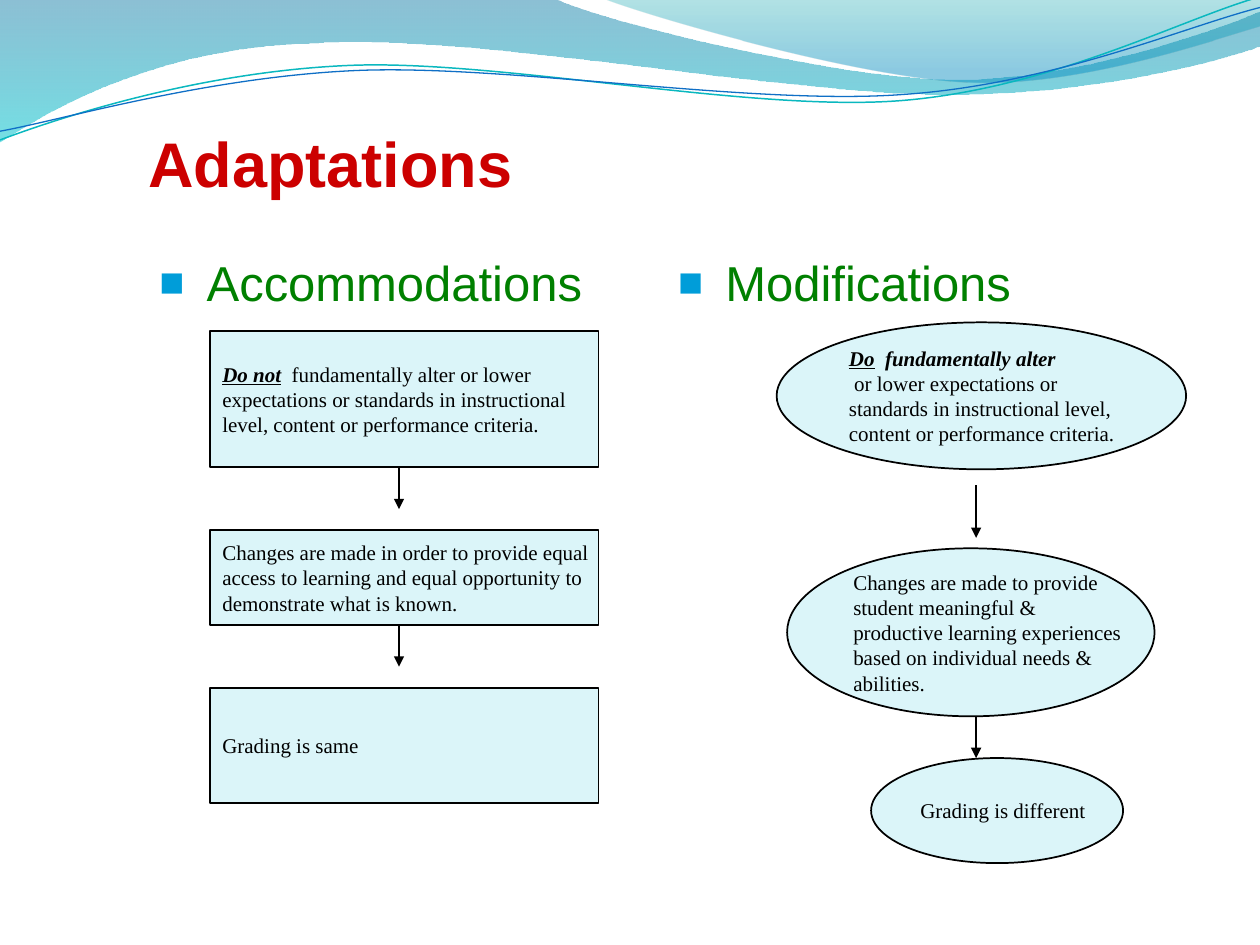
import math
from dataclasses import dataclass

import pptx
import pptx.util
import pptx.dml.color
import pptx.enum.shapes
import pptx.enum.text
import pptx.oxml
import pptx.oxml.ns
from lxml import etree

Pt = pptx.util.Pt
qn = pptx.oxml.ns.qn
KIND = pptx.enum.shapes.MSO_SHAPE
LEFT = pptx.enum.text.PP_ALIGN.LEFT
MID = pptx.enum.text.MSO_ANCHOR.MIDDLE


@dataclass
class Theme:
    red: str = "CC0000"
    green: str = "008000"
    blue: str = "009DD9"
    pale: str = "DBF5F9"
    black: str = "000000"
    teal: str = "0AB8BF"
    navy: str = "0F6FC6"
    deep: tuple = ((0, "0074A1", 45), (1, "00C6CF", 55))
    light: tuple = ((0, "00A1A9", 30), (0.8, "008BBF", 45))
    head: tuple = ("Arial", 36)
    topic: tuple = ("Arial", 28)
    body: tuple = ("Times New Roman", 12)


T = Theme()
STRONG = {"bold": True, "italic": True}
KEY = {**STRONG, "underline": True}

# Wave outlines: a pair is a straight step, six numbers are a curve
DEEP = [(0, 0), (317, -0.7), (343, 12, 478, 45, 546, 45.4), (614, 45.4, 690, 19, 720, 6.5),
        (720.7, 26), (708, 32, 626, 55, 537, 54), (448, 54, 275, 20, 185, 24.5),
        (93, 26, 33, 60, -0.7, 81.4), (0, 0)]
LIGHT = [(345, -0.7), (366, 8, 491, 45, 554, 47), (616, 49.7, 692, 23, 720, 15), (720, 0),
         (345, -0.7)]
TEAL = [(0, 80), (34.6, 67, 113.8, 41, 199.4, 37.4), (284.4, 33.8, 427, 64, 513.4, 57.6),
        (599.8, 51.1, 675.4, 10.8, 718.6, -1.4)]
NAVY = [(0, 75), (33.8, 69, 118, 44, 203.8, 40.3), (290, 36.7, 430, 60.5, 516.2, 54),
        (602, 48.2, 677.5, 15, 720, 4.3)]


def rgb(code):
    return pptx.dml.color.RGBColor.from_string(code)


def spin(steps, mid, angle):
    """Turn all points of the steps clockwise about mid."""
    c, s = math.cos(math.radians(angle)), math.sin(math.radians(angle))
    turned = []
    for step in steps:
        row = []
        for x, y in zip(step[::2], step[1::2]):
            x, y = x - mid[0], y - mid[1]
            row += [mid[0] + x * c - y * s, mid[1] + x * s + y * c]
        turned.append(tuple(row))
    return turned


def outline(slide, steps, close):
    pts = [(Pt(x), Pt(y)) for step in steps for x, y in zip(step[::2], step[1::2])]
    pen = slide.shapes.build_freeform(*pts[0], scale=1.0)
    pen.add_line_segments(pts[1:], close=close)
    shape = pen.convert_to_shape()
    shape.shadow.inherit = False
    # Join each three points of a curve into one bend
    legs = iter(list(shape._element.spPr.iter(qn("a:lnTo"))))
    for step in steps[1:]:
        leg = next(legs)
        if len(step) == 6:
            leg.tag = qn("a:cubicBezTo")
            for extra in (next(legs), next(legs)):
                leg.append(extra[0])
                extra.getparent().remove(extra)
    return shape


def wave(slide, steps, stops):
    shape = outline(slide, steps, True)
    shape.line.fill.background()
    shape.fill.gradient()
    shape.fill.gradient_angle = 270
    for stop, (place, code, _) in zip(shape.fill.gradient_stops, stops):
        stop.position = place
        stop.color.rgb = rgb(code)
    tints = shape._element.spPr.iter(qn("a:srgbClr"))
    for tint, (_, _, alpha) in zip(tints, stops):
        etree.SubElement(tint, qn("a:alpha"), val=str(alpha * 1000))


def strand(slide, steps, color, width, mid):
    tilt = 2.7
    shape = outline(slide, spin(steps, mid, tilt), False)
    shape.rotation = 360 - tilt
    shape.fill.background()
    shape.line.color.rgb = rgb(color)
    shape.line.width = Pt(width)


def write(para, text, face, color, style=None):
    run = para.add_run()
    run.text = text
    look = {"name": face[0], "size": Pt(face[1]), "bold": False, **(style or {})}
    for key, val in look.items():
        setattr(run.font, key, val)
    run.font.color.rgb = rgb(color)


def title(slide, box):
    shape = slide.shapes.title
    for key, val in zip(("left", "top", "width", "height"), box):
        setattr(shape, key, Pt(val))
    shape.text_frame.vertical_anchor = MID
    para = shape.text_frame.paragraphs[0]
    para.alignment = LEFT
    write(para, "Adaptations", T.head, T.red, {"bold": True})


def topic(slide, box, text):
    frame = slide.shapes.add_textbox(*map(Pt, box)).text_frame
    frame.word_wrap = True
    para = frame.paragraphs[0]
    write(para, text, T.topic, T.green)
    props = para._p.get_or_add_pPr()
    props.set("marL", str(Pt(27)))
    props.set("indent", str(Pt(-27)))
    space = etree.SubElement(props, qn("a:spcBef"))
    etree.SubElement(space, qn("a:spcPct"), val="20000")
    tint = etree.SubElement(props, qn("a:buClr"))
    etree.SubElement(tint, qn("a:srgbClr"), val=T.blue)
    etree.SubElement(props, qn("a:buSzPct"), val="85000")
    etree.SubElement(props, qn("a:buFont"), typeface="Arial")
    etree.SubElement(props, qn("a:buChar"), char="■")


def node(slide, kind, box, lines):
    shape = slide.shapes.add_shape(kind, *map(Pt, box))
    shape.shadow.inherit = False
    shape.fill.solid()
    shape.fill.fore_color.rgb = rgb(T.pale)
    shape.line.color.rgb = rgb(T.black)
    shape.line.width = Pt(1)
    frame = shape.text_frame
    frame.word_wrap = False
    frame.vertical_anchor = MID
    for i, line in enumerate(lines):
        para = frame.add_paragraph() if i else frame.paragraphs[0]
        para.alignment = LEFT
        for text, style in [(line, None)] if isinstance(line, str) else line:
            write(para, text, T.body, T.black, style)


def arrow(slide, x, top, end):
    link = slide.shapes.add_connector(
        pptx.enum.shapes.MSO_CONNECTOR.STRAIGHT, Pt(x), Pt(top), Pt(x), Pt(end))
    link.line.color.rgb = rgb(T.black)
    link.line.width = Pt(1)
    etree.SubElement(link.line._get_or_add_ln(), qn("a:tailEnd"), type="triangle")
    etree.SubElement(link._element.spPr, qn("a:effectLst"))


def column(slide, box, name, kind, nodes, x, arrows):
    """A heading with its flow of nodes; offsets count from the box corner."""
    left, top = box[:2]
    topic(slide, box, name)
    for (dx, dy, wide, high), lines in nodes:
        node(slide, kind, (left + dx, top + dy, wide, high), lines)
    for start, end in arrows:
        arrow(slide, left + x, top + start, top + end)


SAME = [
    ((36, 48, 222, 78), [
        [("Do not", KEY), ("  fundamentally alter or lower", None)],
        "expectations or standards in instructional",
        "level, content or performance criteria."]),
    ((36, 162, 222, 54), [
        "Changes are made in order to provide equal",
        "access to learning and equal opportunity to",
        "demonstrate what is known."]),
    ((36, 252, 222, 66), ["Grading is same"])]
OTHER = [
    ((63.4, 43.2, 234, 84), [
        [("Do", KEY), ("  fundamentally alter", STRONG)],
        " or lower expectations or",
        "standards in instructional level,",
        "content or performance criteria."]),
    ((69.4, 172.3, 210, 96), [
        "Changes are made to provide", "student meaningful &",
        "productive learning experiences", "based on individual needs &",
        "abilities."]),
    ((117.4, 292.2, 144, 60), ["Grading is different"])]


def main():
    deck = pptx.Presentation()
    deck.slide_width, deck.slide_height = Pt(720), Pt(540)
    slide = deck.slides.add_slide(deck.slide_layouts[5])
    # Waves along the top edge
    wave(slide, DEEP, T.deep)
    wave(slide, LIGHT, T.light)
    strand(slide, TEAL, T.teal, 0.85, (359.3, 41.4))
    strand(slide, NAVY, T.navy, 0.75, (359.6, 42.5))
    # Title, then the two columns
    title(slide, (77.6, 48, 612, 90))
    column(slide, (84, 141, 300, 324), "Accommodations", KIND.RECTANGLE,
           SAME, 144, [(126, 150), (216, 240)])
    column(slide, (380.4, 141, 300, 324), "Modifications", KIND.OVAL,
           OTHER, 177.4, [(136.2, 166.4), (268.2, 292.2)])
    deck.save("out.pptx")


if __name__ == "__main__":
    main()
